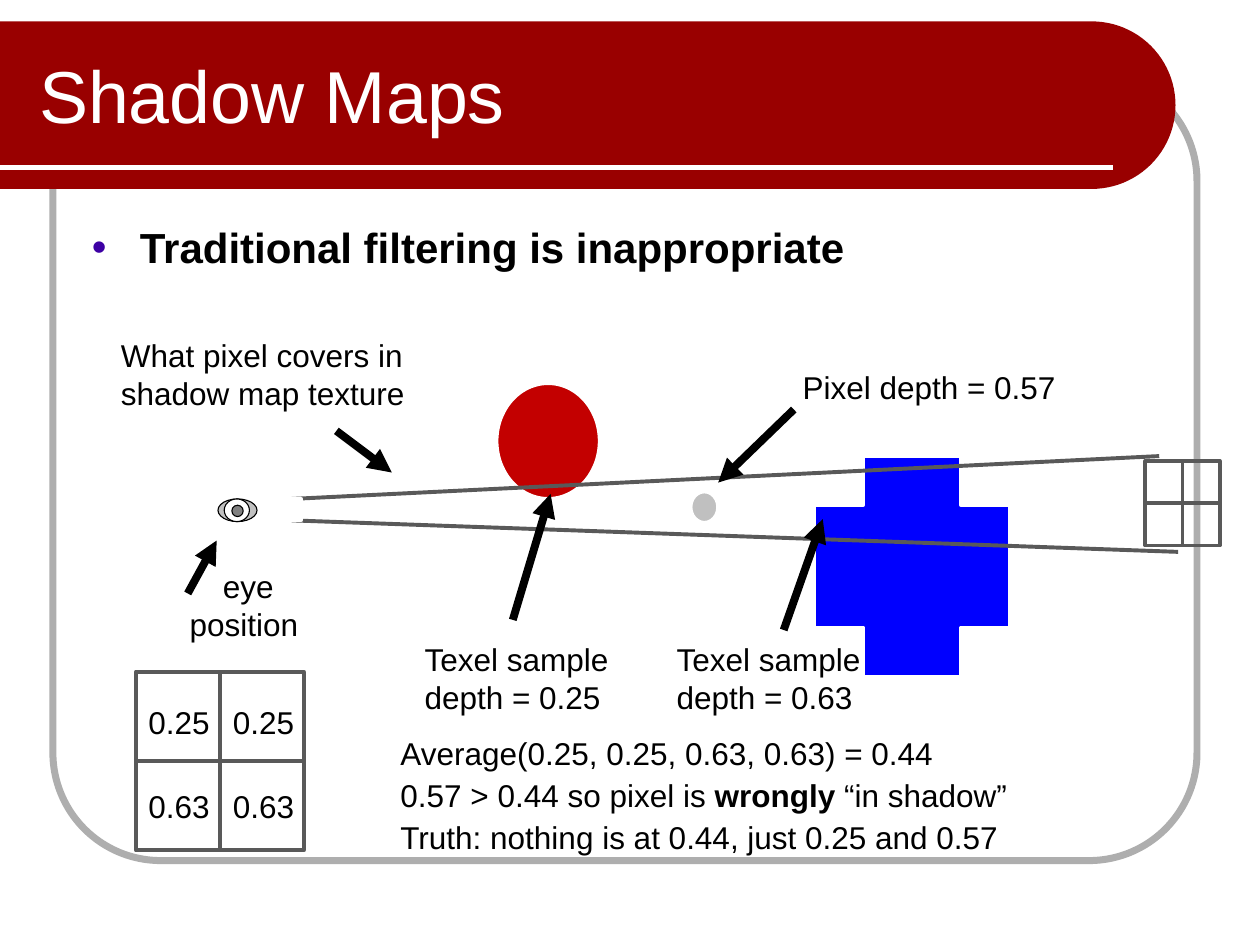
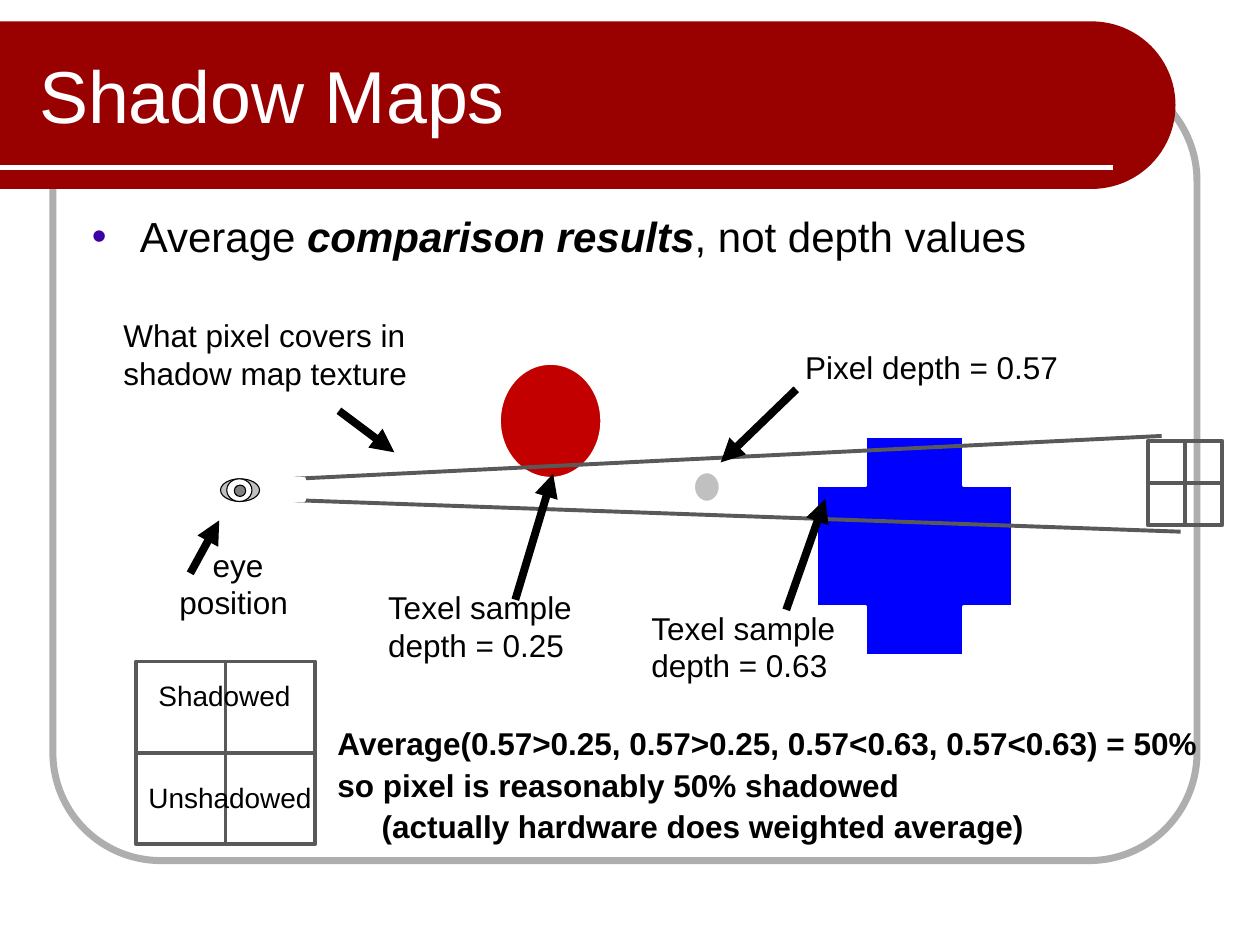
import math

from lxml import etree
from pptx import Presentation
from pptx import util as u
from pptx.dml.color import RGBColor
from pptx.enum import shapes, text
from pptx.oxml import ns

BLACK = RGBColor(0x00, 0x00, 0x00)
WHITE = RGBColor(0xFF, 0xFF, 0xFF)
BAND_RED = RGBColor(0x99, 0x00, 0x00)
FRAME_GRAY = RGBColor(0xAE, 0xAE, 0xAE)
LINE_GRAY = RGBColor(0x59, 0x59, 0x59)
LIGHT_GRAY = RGBColor(0xC0, 0xC0, 0xC0)
PUPIL_GRAY = RGBColor(0x80, 0x80, 0x80)
SPHERE_RED = RGBColor(0xC3, 0x00, 0x00)
CROSS_BLUE = RGBColor(0x00, 0x00, 0xFF)
BULLET_VIOLET = "3D00A4"
FONT = "Arial"
OVAL = shapes.MSO_SHAPE.OVAL


# ---- Basic parts ----
def inches(*values):
    return [u.Inches(v) for v in values]


def add_element(parent, tag, **attributes):
    return etree.SubElement(parent, ns.qn(tag), attributes)


def set_font(p, size, color=BLACK, bold=None):
    p.font.name = FONT
    p.font.size = u.Pt(size)
    p.font.color.rgb = color
    p.font.bold = bold


def style_shape(sp, fill=None, line=None, width=2.25):
    sp.shadow.inherit = False
    if fill is None:
        sp.fill.background()
    else:
        sp.fill.solid()
        sp.fill.fore_color.rgb = fill
    if line is None:
        sp.line.fill.background()
    else:
        sp.line.color.rgb = line
        sp.line.width = u.Pt(width)


def add_preset(s, kind, box, fill=None, line=WHITE, width=2.25, adj=None):
    sp = s.shapes.add_shape(kind, *inches(*box))
    style_shape(sp, fill, line, width)
    if adj is not None:
        sp.adjustments[0] = adj
    return sp


def add_line(s, start, end, color=LINE_GRAY, width=2.25, arrow=False):
    line = s.shapes.add_connector(shapes.MSO_CONNECTOR.STRAIGHT, *inches(*start, *end))
    line.line.color.rgb = color
    line.line.width = u.Pt(width)
    if arrow:
        add_element(line.line._get_or_add_ln(), "a:tailEnd", type="triangle")
    add_element(line.element.spPr, "a:effectLst")
    return line


def add_runs(p, runs):
    """Fill a paragraph from plain strings and (text, bold, italic) tuples."""
    for item in runs:
        words, bold, italic = (item, None, None) if isinstance(item, str) else item
        r = p.add_run()
        r.text = words
        r.font.bold = bold
        r.font.italic = italic


def add_textbox(s, box, inset=True):
    tf = s.shapes.add_textbox(*inches(*box)).text_frame
    tf.word_wrap = False
    tf.auto_size = text.MSO_AUTO_SIZE.SHAPE_TO_FIT_TEXT
    if not inset:
        tf.margin_left = tf.margin_top = tf.margin_right = tf.margin_bottom = 0
    return tf


def add_label(s, box, words, align=text.PP_ALIGN.LEFT):
    p = add_textbox(s, box, inset=False).paragraphs[0]
    p.text = words
    p.alignment = align
    set_font(p, 18)


def add_grid(s, box, color=LINE_GRAY):
    """Two by two cells: an outline and lines between its side midpoints."""
    outline = add_preset(s, shapes.MSO_SHAPE.RECTANGLE, box, line=color)
    for first, last in ((1, 3), (0, 2)):
        line = add_line(s, (0, 0), (1, 1), color)
        line.begin_connect(outline, first)
        line.end_connect(outline, last)
    return outline


# ---- Shared frame, title and bullet ----
def add_frame(s, layout):
    """Draw the frame and title band, then move them to the layout."""
    frame = add_preset(s, shapes.MSO_SHAPE.ROUNDED_RECTANGLE, (0.42, 0.58, 9.08, 6.25),
                       line=FRAME_GRAY, width=4, adj=0.137)
    left, top, width, height = inches(0, 0.17, 9.33, 1.33)
    radius, steps = height / 2, 48
    center_x, center_y = left + width - radius, top + radius
    angles = [math.pi * (i / steps - 0.5) for i in range(steps + 1)]
    arc = [(center_x + radius * math.cos(a), center_y + radius * math.sin(a))
           for a in angles]
    builder = s.shapes.build_freeform(left, top)
    builder.add_line_segments(arc + [(left, top + height)], close=True)
    band = builder.convert_to_shape()
    style_shape(band, BAND_RED)
    rule = add_line(s, (0, 1.33), (8.83, 1.33), WHITE, 3)
    for part in (frame, band, rule):
        layout.shapes.element.append(part.element)


def place(sp, box):
    sp.left, sp.top, sp.width, sp.height = inches(*box)


def add_heading(s, body_top, runs, bold=None):
    title = s.shapes.title
    place(title, (0.21, 0.25, 7.79, 1))
    title.text_frame.vertical_anchor = text.MSO_ANCHOR.MIDDLE
    title.text_frame.auto_size = text.MSO_AUTO_SIZE.NONE
    p = title.text_frame.paragraphs[0]
    p.text = "Shadow Maps"
    p.alignment = text.PP_ALIGN.LEFT
    set_font(p, 42, WHITE)

    body = s.placeholders[1]
    place(body, (0.63, body_top, 9.37, 4.92))
    body.text_frame.auto_size = text.MSO_AUTO_SIZE.NONE
    p = body.text_frame.paragraphs[0]
    add_runs(p, runs)
    pPr = p._p.get_or_add_pPr()
    pPr.set("marL", str(u.Inches(0.38)))
    pPr.set("indent", str(u.Inches(-0.38)))
    add_element(add_element(pPr, "a:buClr"), "a:srgbClr", val=BULLET_VIOLET)
    add_element(pPr, "a:buChar", char="•")
    p.space_before = u.Pt(0)
    set_font(p, 24, bold=bold)


# ---- Scene: eye, view beams, occluders and labels ----
def add_scene(s, left, top, eye_label, near_label, far_label):
    def at(x, y, *size):
        return (left + x, top + y, *size)

    add_preset(s, OVAL, at(2.94, 0.54, 0.82, 0.92), SPHERE_RED)
    add_preset(s, shapes.MSO_SHAPE.CROSS, at(5.46, 1.12, 1.56, 1.75), CROSS_BLUE, adj=0.25)

    # Eye
    for box, fill in (((0.73, 1.46, 0.31, 0.18), LIGHT_GRAY),
                      ((0.78, 1.46, 0.2, 0.18), WHITE),
                      ((0.84, 1.51, 0.09, 0.09), PUPIL_GRAY)):
        add_preset(s, OVAL, at(*box), fill, BLACK, 0.63)

    # Beams from the eye's pixel to the shadow map texels
    upper = add_line(s, at(1.31, 1.46), at(8.2, 1.12))
    lower = add_line(s, at(1.31, 1.62), at(8.35, 1.88))
    add_grid(s, at(8.09, 1.16, 0.59, 0.67))
    eye_pixel = add_grid(s, at(1.24, 1.46, 0.15, 0.17), WHITE)
    upper.begin_connect(eye_pixel, 0)
    lower.begin_connect(eye_pixel, 2)
    add_preset(s, OVAL, at(4.48, 1.4, 0.22, 0.25), LIGHT_GRAY)

    # Pointers
    for start, end in (((0.49, 2.21), (0.72, 1.79)),
                       ((1.67, 0.92), (2.11, 1.25)),
                       ((3.07, 2.42), (3.37, 1.42)),
                       ((5.22, 2.5), (5.53, 1.62)),
                       ((5.3, 0.75), (4.7, 1.33))):
        add_line(s, at(*start), at(*end), BLACK, 4.5, arrow=True)

    # Labels
    add_label(s, at(*eye_label, 0.94, 0.61), "eye\vposition ", text.PP_ALIGN.CENTER)
    add_label(s, at(-0.04, 0.17, 2.27, 0.61), "What pixel covers in\vshadow map texture")
    add_label(s, at(5.37, 0.42, 2.03, 0.3), "Pixel depth = 0.57")
    for spot, depth in ((near_label, "0.25"), (far_label, "0.63")):
        add_label(s, at(*spot, 1.47, 0.61), f"Texel sample\vdepth = {depth}")


# ---- Texel table and conclusion ----
def add_texels(s, box, labels, size):
    """Draw the texel grid; each label is (x, y, width, height, words) in it."""
    left, top = box[:2]
    add_grid(s, box)
    for x, y, width, height, words in labels:
        p = add_textbox(s, (left + x, top + y, width, height)).paragraphs[0]
        p.text = words
        p.line_spacing = 1.1
        set_font(p, size)


def add_conclusion(s, box, lines, bold=None, last_indent=0):
    tf = add_textbox(s, box)
    for i, runs in enumerate(lines):
        p = tf.add_paragraph() if i else tf.paragraphs[0]
        add_runs(p, runs)
        p.line_spacing = 1.1
        p.space_before = p.space_after = u.Pt(0)
        set_font(p, 18, bold=bold)
    p._p.get_or_add_pPr().set("marL", str(u.Inches(last_indent)))


# ---- Slides ----
def build_filtering_slide(s):
    add_heading(s, 1.71, ["Traditional filtering is inappropriate"], bold=True)
    add_scene(s, 1, 2.5, (0.5, 2), (2.37, 2.58), (4.37, 2.58))
    depths = [(0.67 * col, 0.17 + 0.67 * row, 0.69, 0.41, depth)
              for row, depth in enumerate(("0.25", "0.63")) for col in range(2)]
    add_texels(s, (1.08, 5.33, 1.33, 1.42), depths, 18)
    add_conclusion(s, (3.08, 5.75, 5.13, 1.07), [
        ["Average(0.25, 0.25, 0.63, 0.63) = 0.44"],
        ["0.57 > 0.44 so pixel is ", ("wrongly", True, None), " “in shadow”"],
        ["Truth: nothing is at 0.44, just 0.25 and 0.57"],
    ])


def build_comparison_slide(s):
    add_heading(s, 1.62, ["Average ", ("comparison results", True, True),
                          ", not depth values"])
    add_scene(s, 1.02, 2.34, (0.4, 1.99), (2.06, 2.33), (4.15, 2.49))
    add_texels(s, (1.08, 5.25, 1.42, 1.45),
               [(0.08, 0.06, 1.26, 0.37, "Shadowed"),
                (0, 0.87, 1.51, 0.37, "Unshadowed")], 16)
    add_conclusion(s, (2.58, 5.67, 7.08, 1.1), [
        ["Average(0.57>0.25, 0.57>0.25, 0.57<0.63, 0.57<0.63) = 50%"],
        ["so pixel is reasonably 50% shadowed"],
        ["(actually hardware does weighted average)"],
    ], bold=True, last_indent=0.35)


def main():
    prs = Presentation()
    prs.slide_width, prs.slide_height = inches(10, 7.5)
    layout = prs.slide_layouts[1]
    for i, build in enumerate((build_filtering_slide, build_comparison_slide)):
        s = prs.slides.add_slide(layout)
        if i == 0:
            add_frame(s, layout)
        build(s)
    prs.save("out.pptx")


if __name__ == "__main__":
    main()
